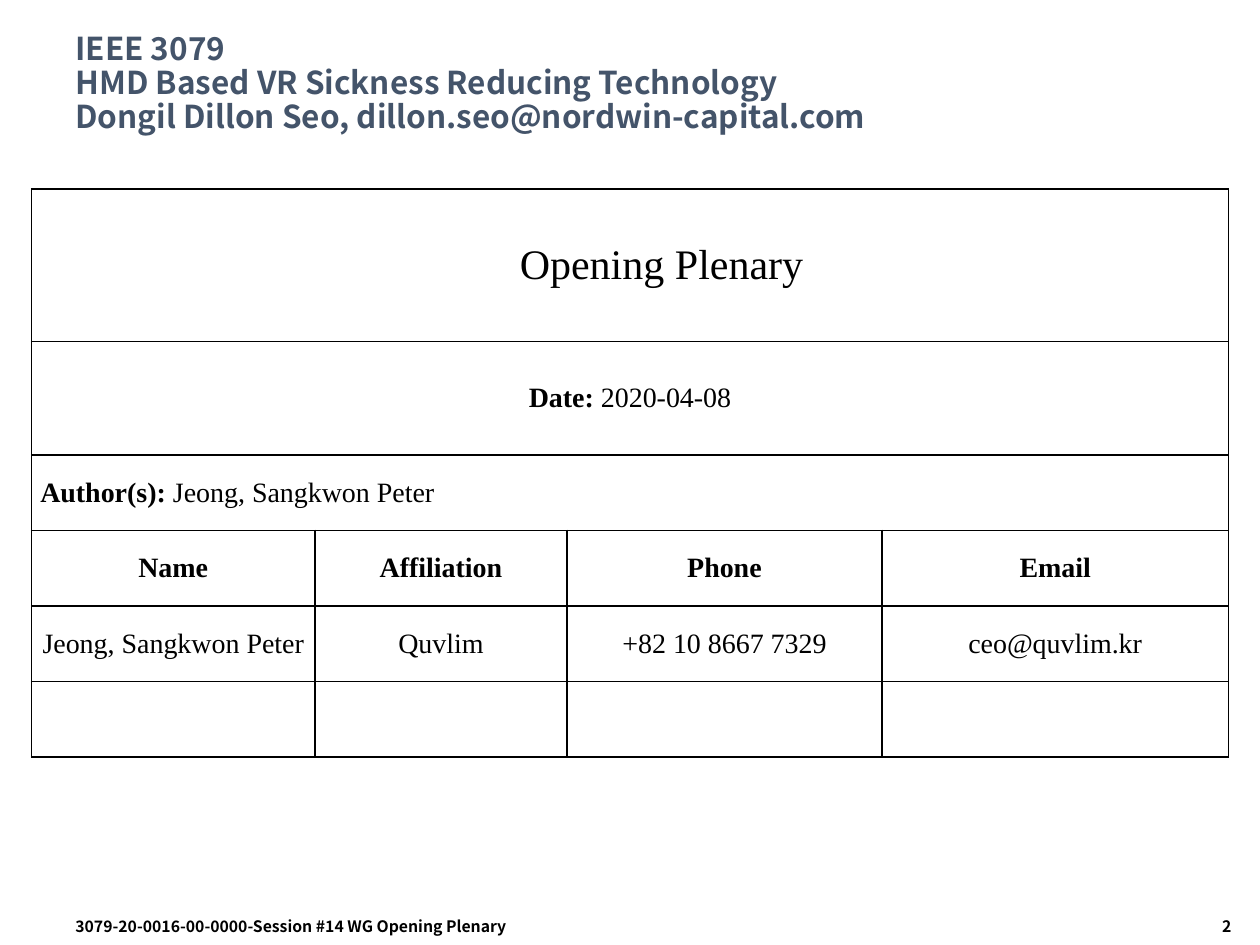
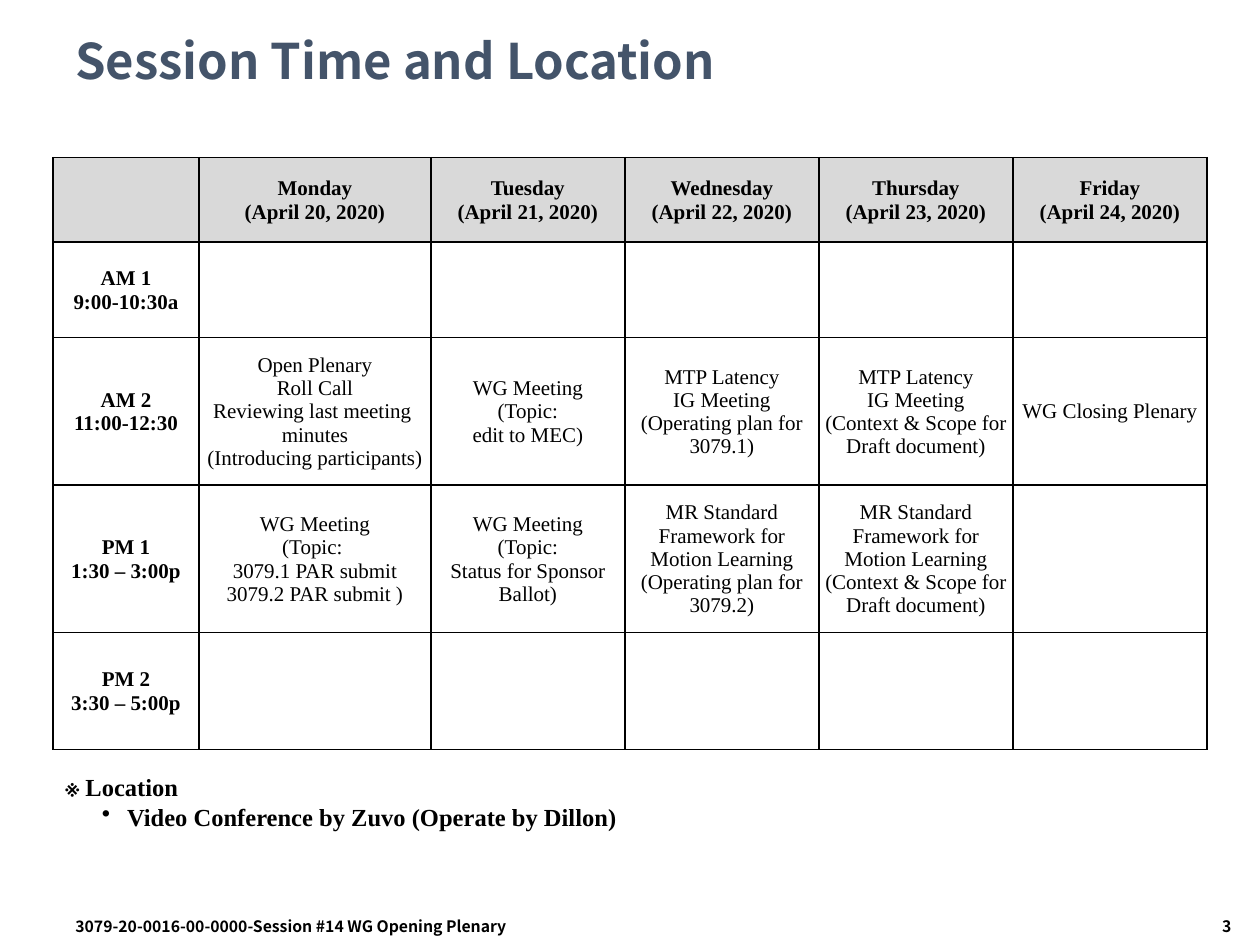
from dataclasses import dataclass, replace

from lxml.etree import SubElement
from pptx import Presentation
from pptx.dml.color import RGBColor
from pptx.enum.text import MSO_ANCHOR as Anchor, PP_ALIGN as Align
from pptx.oxml.ns import qn
from pptx.util import Inches, Pt

SANS = "Noto Sans CJK KR"
SERIF = "Times New Roman"
BLACK = "000000"
SLATE = "44546A"
GRAY = "D9D9D9"
FOOTER = "3079-20-0016-00-0000-Session #14 WG Opening Plenary"


@dataclass(frozen=True)
class Line:
    text: str
    size: float = 16
    bold: bool = False
    font: str = SERIF
    color: str = BLACK
    align: Align = Align.LEFT
    lead: str = ""
    after: float = 0
    space: float = 1
    left: float = 0
    hang: float = 0
    bullet: str = ""


@dataclass(frozen=True)
class Box:
    left: float
    top: float
    width: float
    height: float

    def frame(self) -> tuple:
        return tuple(Inches(n) for n in (self.left, self.top, self.width, self.height))


@dataclass(frozen=True)
class Cell:
    lines: tuple = ()
    fill: str = ""


@dataclass(frozen=True)
class Grid:
    box: Box
    cols: list
    rows: list
    cells: list
    inset: tuple


def paint(text: str) -> RGBColor:
    return RGBColor.from_string(text)


def write(frame, lines) -> None:
    for i, line in enumerate(lines):
        para = frame.add_paragraph() if i else frame.paragraphs[0]
        if line.lead:
            para.add_run().text = line.lead
            para.runs[0].font.bold = True
            para.add_run().text = line.text
        else:
            para.text = line.text
        para.alignment = line.align
        para.line_spacing = line.space
        para.space_after = Pt(line.after)
        props = para._p.get_or_add_pPr()
        props.set("marL", str(Inches(line.left)))
        props.set("indent", str(Inches(line.hang)))
        if line.bullet:
            SubElement(props, qn("a:buChar"), char=line.bullet)
        font = para.font
        font.name = line.font
        font.size = Pt(line.size)
        font.bold = line.bold
        font.color.rgb = paint(line.color)


def add_text(slide, box: Box, *lines: Line, anchor=Anchor.TOP) -> None:
    frame = slide.shapes.add_textbox(*box.frame()).text_frame
    frame.word_wrap = True
    frame.vertical_anchor = anchor
    write(frame, lines)


def add_edges(cell) -> None:
    props = cell._tc.get_or_add_tcPr()
    for side in ("lnL", "lnR", "lnT", "lnB"):
        edge = SubElement(props, qn(f"a:{side}"), w=str(Pt(1)))
        fill = SubElement(edge, qn("a:solidFill"))
        SubElement(fill, qn("a:srgbClr"), val=BLACK)


def add_grid(slide, grid: Grid) -> None:
    shape = slide.shapes.add_table(len(grid.rows), len(grid.cols), *grid.box.frame())
    table = shape.table
    table.first_row = table.horz_banding = False
    for col, width in zip(table.columns, grid.cols):
        col.width = Inches(width)
    for row, height in zip(table.rows, grid.rows):
        row.height = Inches(height)
    for cell in table.iter_cells():
        add_edges(cell)
        cell.fill.background()
        cell.vertical_anchor = Anchor.MIDDLE
        (cell.margin_left, cell.margin_top,
         cell.margin_right, cell.margin_bottom) = map(Inches, grid.inset)
    for y, row in enumerate(grid.cells):
        if len(row) == 1:
            table.cell(y, 0).merge(table.cell(y, len(grid.cols) - 1))
        for x, item in enumerate(row):
            cell = table.cell(y, x)
            write(cell.text_frame, item.lines)
            if item.fill:
                cell.fill.solid()
                cell.fill.fore_color.rgb = paint(item.fill)


def add_page(deck, title: str, size: float, height: float, number: int):
    slide = deck.slides.add_slide(deck.slide_layouts[6])
    head = Line(title, size, True, SANS, SLATE, space=0.9)
    add_text(slide, Box(0.5, 0.17, 9, height), head, anchor=Anchor.MIDDLE)
    foot = Line(FOOTER, 9, True, SANS)
    add_text(slide, Box(0.5, 7.23, 4.42, 0.27), foot)
    add_text(slide, Box(8.25, 7.23, 1.62, 0.27),
             replace(foot, text=str(number), align=Align.RIGHT))
    return slide


def center(text: str, size: float, bold: bool = False, fill: str = "") -> Cell:
    lines = (Line(part, size, bold, align=Align.CENTER) for part in text.split("\n"))
    return Cell(tuple(lines), fill)


def add_cover(deck) -> None:
    title = ("IEEE 3079\nHMD Based VR Sickness Reducing Technology\n"
             "Dongil Dillon Seo, dillon.seo@nordwin-capital.com")
    slide = add_page(deck, title, 18, 1, 2)
    name = "Jeong, Sangkwon Peter"
    topic = Line("Opening Plenary", 24, align=Align.CENTER, after=12, left=0.5)
    date = Line(" 2020-04-08", align=Align.CENTER, lead="Date:", after=12)
    author = Line(name, lead="Author(s): ")
    heads = ["Name", "Affiliation", "Phone", "Email"]
    facts = [name, "Quvlim", "+82 10 8667 7329", "ceo@quvlim.kr"]
    cells = [[Cell((line,))] for line in (topic, date, author)]
    cells += [[center(text, 16, True) for text in heads],
              [center(text, 16) for text in facts]]
    add_grid(slide, Grid(Box(0.25, 1.5, 9.5, 4.5), [2.25, 2, 2.5, 2.75],
                         [1.21, 0.9] + [0.6] * 4, cells, (0.07, 0, 0.07, 0)))


def add_plan(deck) -> None:
    slide = add_page(deck, "Session Time and Location", 28, 0.67, 3)
    days = ["Monday", "Tuesday", "Wednesday", "Thursday", "Friday"]
    heads = [""] + [f"{day}\n(April {date}, 2020)" for date, day in enumerate(days, 20)]
    latency = "MTP Latency\nIG Meeting\n"
    motion = "MR Standard Framework for Motion Learning\v"
    plan = "(Operating plan for {})"
    scope = "(Context & Scope for Draft document)"
    slots = {
        "AM 1\n9:00-10:30a": [],
        "AM 2\n11:00-12:30": [
            "Open Plenary\nRoll Call\nReviewing last meeting \vminutes\n"
            "(Introducing participants)",
            "WG Meeting\n(Topic:\vedit to MEC)",
            latency + plan.format("3079.1"),
            latency + scope,
            "WG Closing Plenary",
        ],
        "PM 1\n1:30 – 3:00p": [
            "WG Meeting\n(Topic: \v3079.1 PAR submit\v3079.2 PAR submit )",
            "WG Meeting\n(Topic:\vStatus for Sponsor Ballot)",
            motion + plan.format("3079.2"),
            motion + scope,
        ],
        "PM 2\n3:30 – 5:00p": [],
    }
    cells = [[center(text, 12, True, GRAY) for text in heads]]
    cells += [[center(time, 12, True)] + [center(text, 12) for text in items]
              + [Cell()] * (len(days) - len(items)) for time, items in slots.items()]
    add_grid(slide, Grid(Box(0.42, 1.25, 9.17, 4.71), [1.16, 1.84] + [1.54] * 4,
                         [0.67, 0.76, 1.17, 1.17, 0.93], cells, (0.01, 0.01, 0.01, 0)))
    add_text(slide, Box(0.42, 6.08, 9.17, 0.57),
             Line("※ Location", 14, True),
             Line("Video Conference by Zuvo (Operate by Dillon)", 14, True,
                  left=0.49, hang=-0.2, bullet="•"))


def main() -> None:
    deck = Presentation()
    deck.slide_width = Inches(10)
    deck.slide_height = Inches(7.5)
    add_cover(deck)
    add_plan(deck)
    deck.save("out.pptx")


if __name__ == "__main__":
    main()
